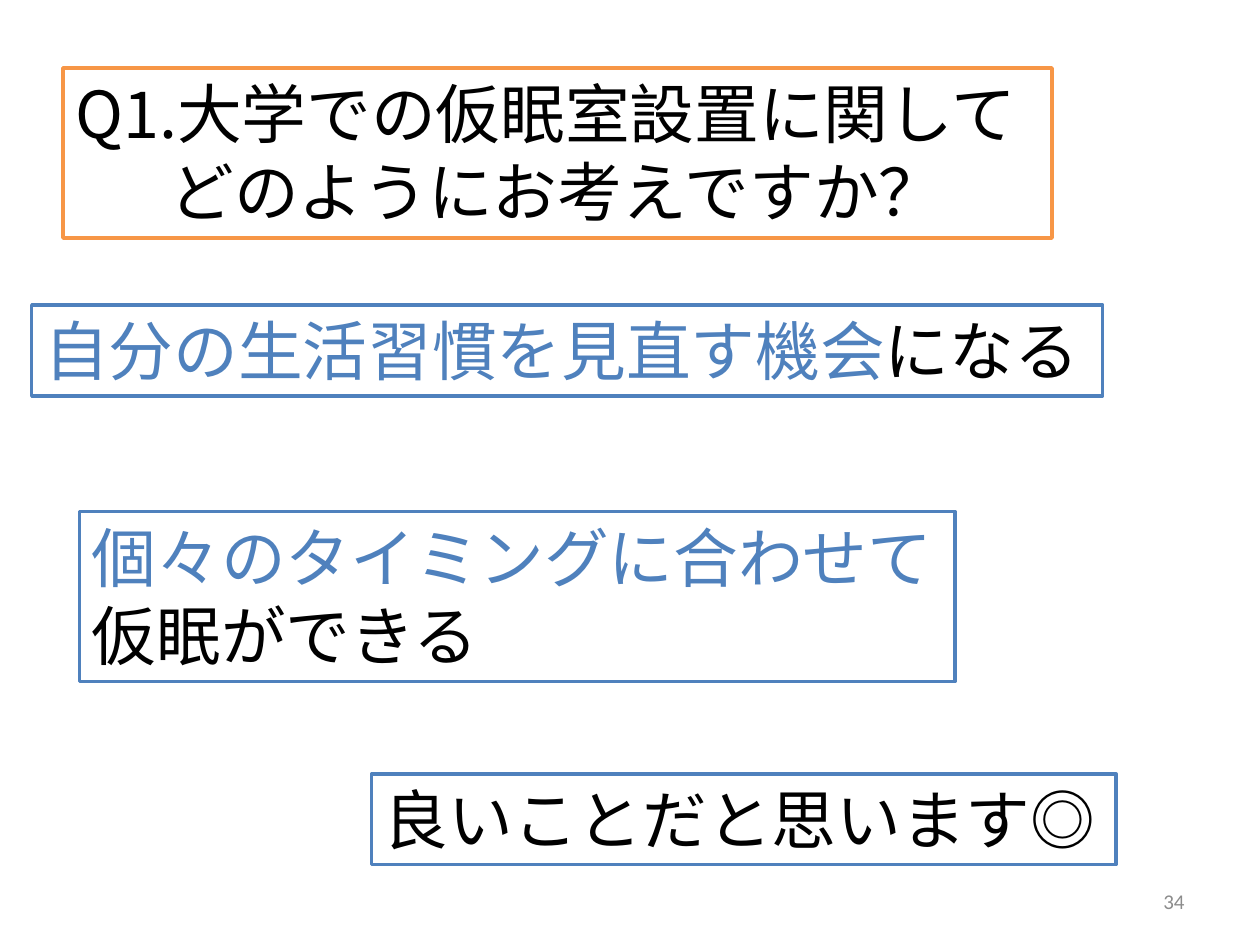
from lxml.etree import SubElement
from pptx import Presentation
from pptx.dml.color import RGBColor
from pptx.enum.shapes import MSO_SHAPE as SHAPE
from pptx.enum.text import MSO_ANCHOR as ANCHOR, PP_ALIGN as ALIGN
from pptx.oxml.ns import qn
from pptx.util import Cm, Pt

WHITE = RGBColor(0xFF, 0xFF, 0xFF)
BLACK = RGBColor(0, 0, 0)
BLUE = RGBColor(0x4F, 0x81, 0xBD)
ORANGE = RGBColor(0xF7, 0x96, 0x46)
GRAY = RGBColor(0x8C, 0x8C, 0x8C)
JP_FONT = "Noto Sans CJK JP"

prs = Presentation()
prs.slide_width, prs.slide_height = Cm(25.4), Cm(19.05)
s = prs.slides.add_slide(prs.slide_layouts[6])

# Page number
sp = s.shapes.add_textbox(Cm(18.21), Cm(17.65), Cm(5.92), Cm(1.02))
tf = sp.text_frame
tf.word_wrap = True
tf.vertical_anchor = ANCHOR.MIDDLE
p = tf.paragraphs[0]
p.text = "34"
p.alignment = ALIGN.RIGHT
p.font.size = Pt(12)
p.font.name = "Calibri"
p.font.color.rgb = GRAY

# Left, top, width, height in cm; border; lines of (indent in cm, runs)
boxes = [
    (1.27, 1.37, 19.94, 3.43, ORANGE, [
        (0, [("Q1.大学での仮眠室設置に関して", BLACK)]),
        (1.9, [("どのようにお考えですか？", BLACK)])]),
    (0.64, 6.15, 21.59, 1.83, BLUE, [
        (0, [("自分の生活習慣を見直す機会", BLUE), ("になる", BLACK)])]),
    (1.6, 10.31, 17.65, 3.43, BLUE, [
        (0, [("個々のタイミングに合わせて", BLUE)]),
        (0, [("仮眠ができる", BLACK)])]),
    (7.49, 15.6, 15.01, 1.83, BLUE, [
        (0, [("良いことだと思います◎", BLACK)])]),
]

for left, top, width, height, border, lines in boxes:
    sp = s.shapes.add_shape(SHAPE.RECTANGLE, Cm(left), Cm(top), Cm(width), Cm(height))
    sp.shadow.inherit = False
    sp.fill.solid()
    sp.fill.fore_color.rgb = WHITE
    color = sp.fill._xPr.find(qn("a:solidFill"))[0]
    SubElement(color, qn("a:alpha")).set("val", "93000")
    sp.line.color.rgb = border
    sp.line.width = Pt(2)
    tf = sp.text_frame
    tf.word_wrap = True
    tf.vertical_anchor = ANCHOR.TOP
    for i, (indent, runs) in enumerate(lines):
        p = tf.add_paragraph() if i else tf.paragraphs[0]
        p.alignment = ALIGN.LEFT
        p.line_spacing = Pt(44.4)
        p._p.get_or_add_pPr().set("marL", str(Cm(indent)))
        for text, rgb in runs:
            r = p.add_run()
            r.text = text
            r.font.size = Pt(37)
            r.font.color.rgb = rgb
            r.font.name = JP_FONT
            SubElement(r.font._element, qn("a:ea")).set("typeface", JP_FONT)

prs.save("out.pptx")
